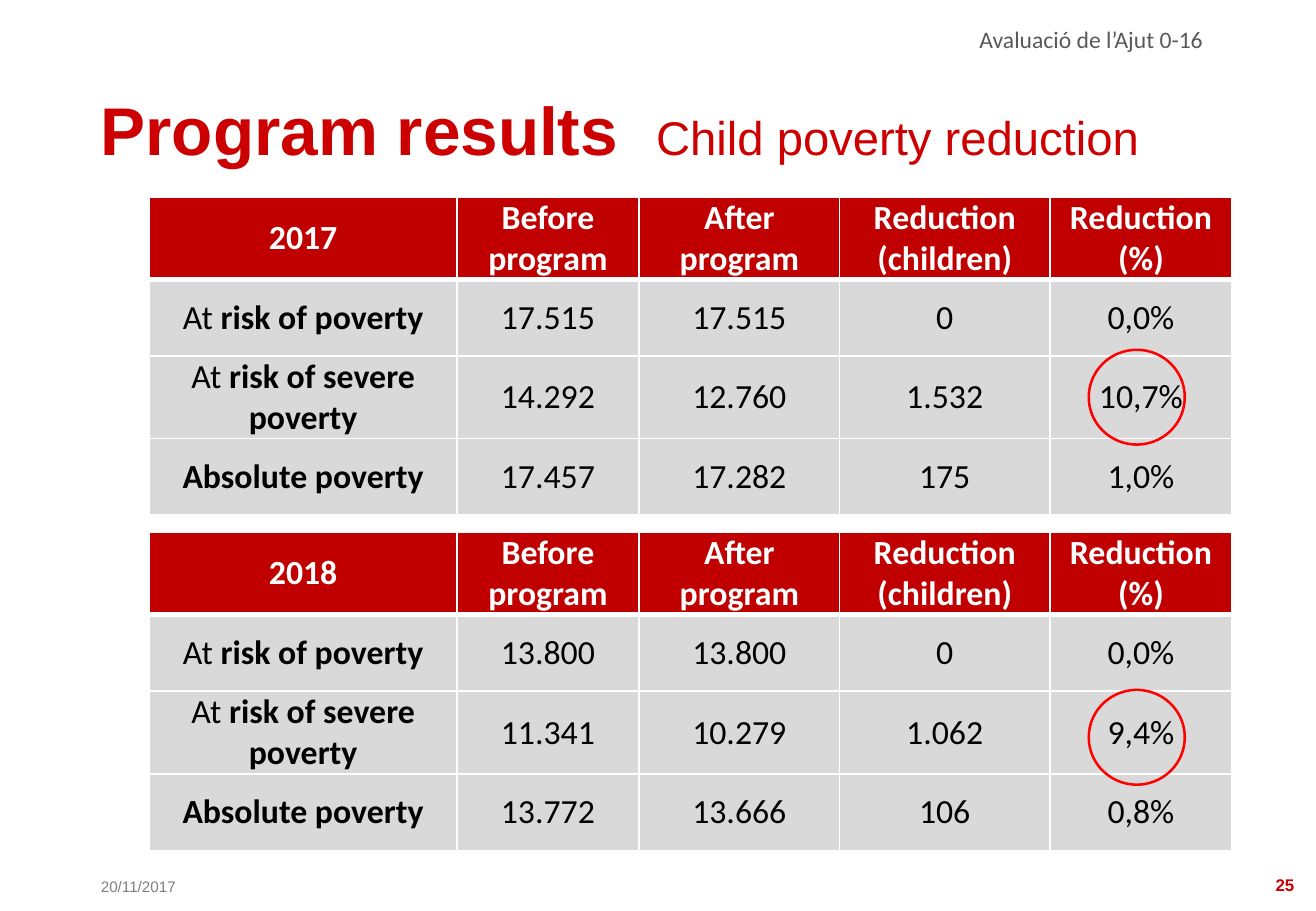
"""Build the slide on child poverty reduction with its two yearly result tables."""
from dataclasses import dataclass

from lxml.etree import SubElement
from pptx import Presentation
from pptx.dml.color import RGBColor
from pptx.enum.shapes import MSO_SHAPE
from pptx.enum.text import MSO_ANCHOR, PP_ALIGN
from pptx.oxml.ns import qn
from pptx.slide import Slide
from pptx.table import _Cell
from pptx.text.text import _Paragraph
from pptx.util import Inches, Pt


@dataclass(frozen=True)
class Theme:
    heading_font: str = "Arial"
    body_font: str = "Calibri"
    red: str = "CC0000"
    header_fill: str = "C00000"
    cell_fill: str = "D9D9D9"
    circle: str = "FF0000"
    white: str = "FFFFFF"
    black: str = "000000"
    date_grey: str = "7F7F7F"
    header_grey: str = "595959"
    title_size: float = 40
    subtitle_size: float = 28
    table_size: float = 20
    header_size: float = 14
    number_size: float = 10
    date_size: float = 9


@dataclass(frozen=True)
class Label:
    text: str
    left: float
    top: float
    width: float
    height: float
    size: float
    color: str
    font: str = Theme.heading_font
    bold: bool = False
    align: PP_ALIGN = PP_ALIGN.LEFT
    anchor: MSO_ANCHOR = MSO_ANCHOR.TOP
    boxed: bool = False
    inset_left: float = 0
    inset_top: float = 0.05
    line_spacing: float = 1.0


@dataclass(frozen=True)
class YearResults:
    year: str
    top: float
    circle_top: float
    values: tuple[tuple[str, ...], ...]


THEME = Theme()
TABLE_LEFT = 1.23
COLUMN_WIDTHS = (2.53, 1.5, 1.65, 1.73, 1.5)
ROW_HEIGHTS = (0.67, 0.63, 0.67, 0.63)
COLUMN_TITLES = ("Before program", "After program", "Reduction (children)", "Reduction (%)")
ROW_TITLES = (("At ", "risk of poverty"), ("At ", "risk of severe poverty"), ("", "Absolute poverty"))

LABELS = (
    Label("20/11/2017", 0.83, 7.18, 0.92, 0.24, THEME.date_size, THEME.date_grey,
          anchor=MSO_ANCHOR.BOTTOM),
    Label("25", 10.25, 7.17, 0.5, 0.25, THEME.number_size, THEME.red, bold=True,
          align=PP_ALIGN.RIGHT, anchor=MSO_ANCHOR.BOTTOM),
    Label("Avaluació de l’Ajut 0-16", 3.17, 0.25, 6.83, 0.21, THEME.header_size,
          THEME.header_grey, THEME.body_font, align=PP_ALIGN.RIGHT,
          inset_left=0.1, inset_top=0.09, line_spacing=0.3),
    Label("Program results", 0.83, 0.68, 4.58, 0.63, THEME.title_size, THEME.red,
          bold=True, boxed=True),
    Label("Child poverty reduction", 5.4, 0.84, 5.06, 0.63, THEME.subtitle_size, THEME.red,
          boxed=True),
)

RESULTS = (
    YearResults("2017", 1.62, 2.88, (
        ("17.515", "17.515", "0", "0,0%"),
        ("14.292", "12.760", "1.532", "10,7%"),
        ("17.457", "17.282", "175", "1,0%"),
    )),
    YearResults("2018", 4.38, 5.68, (
        ("13.800", "13.800", "0", "0,0%"),
        ("11.341", "10.279", "1.062", "9,4%"),
        ("13.772", "13.666", "106", "0,8%"),
    )),
)


def style_paragraph(paragraph: _Paragraph, font: str, size: float, color: str,
                    align: PP_ALIGN) -> None:
    """Set the alignment and shared font of a paragraph."""
    paragraph.alignment = align
    paragraph.font.name = font
    paragraph.font.size = Pt(size)
    paragraph.font.color.rgb = RGBColor.from_string(color)


def add_label(slide: Slide, label: Label) -> None:
    """Draw one line of text, in a white rectangle when it is boxed."""
    area = [Inches(length) for length in (label.left, label.top, label.width, label.height)]
    if label.boxed:
        shape = slide.shapes.add_shape(MSO_SHAPE.RECTANGLE, *area)
        shape.shadow.inherit = False
        shape.fill.solid()
        shape.fill.fore_color.rgb = RGBColor.from_string(THEME.white)
        shape.line.color.rgb = RGBColor.from_string(THEME.white)
        shape.line.width = Pt(0.75)
    else:
        shape = slide.shapes.add_textbox(*area)
    frame = shape.text_frame
    frame.word_wrap = True
    frame.vertical_anchor = label.anchor
    frame.margin_left = Inches(label.inset_left)
    frame.margin_top = Inches(label.inset_top)
    paragraph = frame.paragraphs[0]
    paragraph.text = label.text
    paragraph.line_spacing = label.line_spacing
    style_paragraph(paragraph, label.font, label.size, label.color, label.align)
    paragraph.font.bold = label.bold


def add_borders(cell: _Cell, row: int) -> None:
    """Give a cell white borders, thick below the header row."""
    properties = cell._tc.get_or_add_tcPr()
    widths = {"lnL": 1, "lnR": 1, "lnT": 3 if row == 1 else 1, "lnB": 3 if row == 0 else 1}
    for side, width in widths.items():
        line = SubElement(properties, qn(f"a:{side}"), w=str(Pt(width)))
        fill = SubElement(line, qn("a:solidFill"))
        SubElement(fill, qn("a:srgbClr"), val=THEME.white)


def fill_cell(cell: _Cell, row: int, regular: str, bold: str) -> None:
    """Write regular and then bold text into a styled table cell."""
    add_borders(cell, row)
    cell.fill.solid()
    cell.fill.fore_color.rgb = RGBColor.from_string(
        THEME.header_fill if row == 0 else THEME.cell_fill)
    cell.vertical_anchor = MSO_ANCHOR.MIDDLE
    cell.margin_left = cell.margin_right = Inches(0.07)
    cell.margin_top = cell.margin_bottom = 0
    paragraph = cell.text_frame.paragraphs[0]
    style_paragraph(paragraph, THEME.body_font, THEME.table_size,
                    THEME.white if row == 0 else THEME.black, PP_ALIGN.CENTER)
    parts = [(text, weight) for text, weight in ((regular, False), (bold, True)) if text]
    for text, weight in parts:
        run = paragraph.add_run()
        run.text = text
        if len(parts) > 1:
            run.font.bold = weight
        else:
            paragraph.font.bold = weight


def add_results(slide: Slide, results: YearResults) -> None:
    """Draw the table of one year and circle its severe poverty reduction."""
    table = slide.shapes.add_table(
        len(ROW_HEIGHTS), len(COLUMN_WIDTHS), Inches(TABLE_LEFT), Inches(results.top),
        Inches(sum(COLUMN_WIDTHS)), Inches(sum(ROW_HEIGHTS))).table
    for column, width in zip(table.columns, COLUMN_WIDTHS):
        column.width = Inches(width)
    for table_row, height in zip(table.rows, ROW_HEIGHTS):
        table_row.height = Inches(height)
    rows = [[("", title) for title in (results.year, *COLUMN_TITLES)]]
    for row_title, values in zip(ROW_TITLES, results.values):
        rows.append([row_title, *((value, "") for value in values)])
    for row, cells in enumerate(rows):
        for column, (regular, bold) in enumerate(cells):
            fill_cell(table.cell(row, column), row, regular, bold)
    circle = slide.shapes.add_shape(
        MSO_SHAPE.OVAL, Inches(8.96), Inches(results.circle_top), Inches(0.79), Inches(0.78))
    circle.shadow.inherit = False
    circle.fill.background()
    circle.line.color.rgb = RGBColor.from_string(THEME.circle)
    circle.line.width = Pt(1.5)


def main() -> None:
    """Create the presentation and save it."""
    presentation = Presentation()
    presentation.slide_width = Inches(10.83)
    presentation.slide_height = Inches(7.5)
    slide = presentation.slides.add_slide(presentation.slide_layouts[6])
    for results in RESULTS:
        add_results(slide, results)
    for label in LABELS:
        add_label(slide, label)
    presentation.save("out.pptx")


if __name__ == "__main__":
    main()
